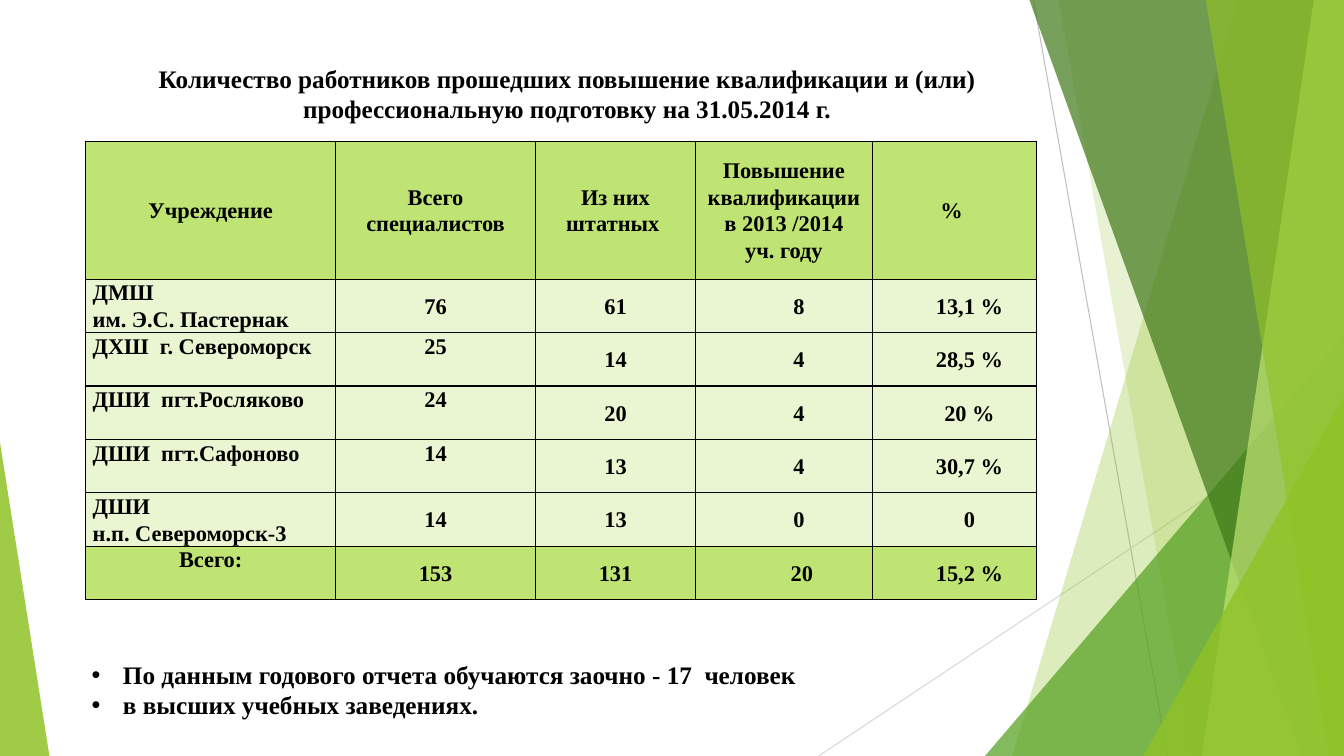
"""Build the slide on staff qualification upgrades with its table and green facets."""
from lxml.etree import SubElement
from pptx import Presentation
from pptx.dml.color import RGBColor
from pptx.enum.shapes import MSO_CONNECTOR, MSO_SHAPE
from pptx.enum.text import MSO_ANCHOR, MSO_AUTO_SIZE, PP_ALIGN
from pptx.oxml.ns import qn
from pptx.util import Inches, Pt

COLORS = {
    "text": "000000",
    "header": "C0E474",
    "row": "EAF6D1",
    "lime": "90C226",
    "green": "54A021",
    "dark": "3F7819",
    "pale": "C0E474",
    "gray": "BFBFBF",
    "light_gray": "D9D9D9",
}
WIDTH, HEIGHT = 13.33, 7.5


def color(name):
    return RGBColor.from_string(COLORS[name])


def style_paragraph(paragraph, size, alignment):
    paragraph.alignment = alignment
    paragraph.font.name = "Times New Roman"
    paragraph.font.size = Pt(size)
    paragraph.font.bold = True
    paragraph.font.color.rgb = color("text")


presentation = Presentation()
presentation.slide_width = Inches(WIDTH)
presentation.slide_height = Inches(HEIGHT)
slide = presentation.slides.add_slide(presentation.slide_layouts[1])
shapes = slide.shapes

rays = [
    (10.25, 0, 11.58, HEIGHT, "gray"),
    (WIDTH, 4.03, 8.12, HEIGHT, "light_gray"),
]
for start_x, start_y, end_x, end_y, line_color in rays:
    ray = shapes.add_connector(
        MSO_CONNECTOR.STRAIGHT,
        Inches(start_x), Inches(start_y), Inches(end_x), Inches(end_y),
    )
    ray.line.color.rgb = color(line_color)
    ray.line.width = Pt(0.75)
    SubElement(ray._element.spPr, qn("a:effectLst"))

facets = [
    ("panel", (12.28, 10.04), "lime", 30),
    ("panel", (10.5, 11.83), "lime", 20),
    ("triangle", (9.77, 3.33, 3.56, 1), "green", 72),
    ("panel", (10.21, 12.91), "dark", 70),
    ("panel", (13.03, 11.92), "pale", 70),
    ("panel", (11.96, 13.18), "lime", 65),
    ("triangle", (11.34, 3.93, 1.99, 1), "lime", 80),
    ("triangle", (0, 4.39, 0.49, 0), "lime", 85),
]
for kind, geometry, fill_color, opacity in facets:
    if kind == "panel":
        top_x, bottom_x = geometry
        builder = shapes.build_freeform(Inches(top_x), 0)
        corners = [(WIDTH, 0), (WIDTH, HEIGHT), (bottom_x, HEIGHT)]
        builder.add_line_segments([(Inches(x), Inches(y)) for x, y in corners])
        facet = builder.convert_to_shape()
    else:
        left, top, width, apex = geometry
        facet = shapes.add_shape(
            MSO_SHAPE.ISOSCELES_TRIANGLE,
            Inches(left), Inches(top), Inches(width), Inches(HEIGHT - top),
        )
        facet.adjustments[0] = apex
    facet.shadow.inherit = False
    facet.line.fill.background()
    facet.fill.solid()
    facet.fill.fore_color.rgb = color(fill_color)
    fill_element = facet._element.spPr.find(qn("a:solidFill"))[0]
    SubElement(fill_element, qn("a:alpha"), val=str(opacity * 1000))

rows = [
    ["Учреждение", "Всего\nспециалистов", "Из них штатных ",
     "Повышение квалификации\n в 2013 /2014 \nуч. году", "% "],
    ["ДМШ \nим. Э.С. Пастернак", "76", "61", "8", "13,1 %"],
    ["ДХШ  г. Североморск", "25", "14", "4", "28,5 %"],
    ["ДШИ  пгт.Росляково", "24", "20", "4", "20 %"],
    ["ДШИ  пгт.Сафоново", "14", "13", "4", "30,7 %"],
    ["ДШИ \nн.п. Североморск-3", "14", "13", "0", "0"],
    ["Всего:", "153", "131", " 20", "15,2 %"],
]
column_widths = [2.48, 1.98, 1.59, 1.75, 1.63]
row_heights = [1.37] + [0.53] * 6
total_row = len(rows) - 1
top_aligned_counts = {(2, 1), (3, 1), (4, 1)}

table = shapes.add_table(
    len(rows), len(column_widths), Inches(0.85), Inches(1.4),
    Inches(sum(column_widths)), Inches(sum(row_heights)),
).table
table.first_row = False
table.horz_banding = False
for column, width in zip(table.columns, column_widths):
    column.width = Inches(width)
for row, height in zip(table.rows, row_heights):
    row.height = Inches(height)

for row_index, texts in enumerate(rows):
    for column_index, text in enumerate(texts):
        cell = table.cell(row_index, column_index)
        is_header = row_index == 0
        is_name = column_index == 0 and 0 < row_index < total_row
        is_top = (column_index == 0 and not is_header) or (row_index, column_index) in top_aligned_counts
        cell.text = text
        cell.margin_left = cell.margin_right = Inches(0.07)
        cell.margin_top = cell.margin_bottom = 0
        cell.vertical_anchor = MSO_ANCHOR.TOP if is_top else MSO_ANCHOR.MIDDLE
        for paragraph in cell.text_frame.paragraphs:
            style_paragraph(paragraph, 16, PP_ALIGN.JUSTIFY if is_name else PP_ALIGN.CENTER)
            paragraph.line_spacing = 1.07
            if column_index >= 3 and not is_header:
                paragraph._p.get_or_add_pPr().set("indent", str(Inches(0.3)))
        cell_properties = cell._tc.get_or_add_tcPr()
        for side in ("lnL", "lnR", "lnT", "lnB"):
            border = SubElement(cell_properties, qn(f"a:{side}"), w=str(Pt(1)))
            border_fill = SubElement(border, qn("a:solidFill"))
            SubElement(border_fill, qn("a:srgbClr"), val=COLORS["text"])
        cell.fill.solid()
        cell.fill.fore_color.rgb = color("header" if row_index in (0, total_row) else "row")

title = shapes.title
title.left, title.top = Inches(0.97), Inches(0.56)
title.width, title.height = Inches(9.31), Inches(0.74)
title.text_frame.text = (
    "Количество работников прошедших повышение квалификации и (или) "
    "профессиональную подготовку на 31.05.2014 г."
)
title.text_frame.auto_size = MSO_AUTO_SIZE.NONE
title.text_frame.vertical_anchor = MSO_ANCHOR.MIDDLE
style_paragraph(title.text_frame.paragraphs[0], 18, PP_ALIGN.CENTER)

notes_list = slide.placeholders[1]
notes_list.left, notes_list.top = Inches(0.81), Inches(6.49)
notes_list.width, notes_list.height = Inches(9.64), Inches(1.01)
notes_list.text_frame.text = (
    "По данным годового отчета обучаются заочно - 17  человек\n"
    "в высших учебных заведениях."
)
notes_list.text_frame.auto_size = MSO_AUTO_SIZE.NONE
for paragraph in notes_list.text_frame.paragraphs:
    style_paragraph(paragraph, 18, PP_ALIGN.LEFT)
    paragraph.space_before = Pt(0)
    paragraph_properties = paragraph._p.get_or_add_pPr()
    paragraph_properties.set("marL", str(Inches(0.31)))
    paragraph_properties.set("indent", str(-Inches(0.31)))

presentation.save("out.pptx")
